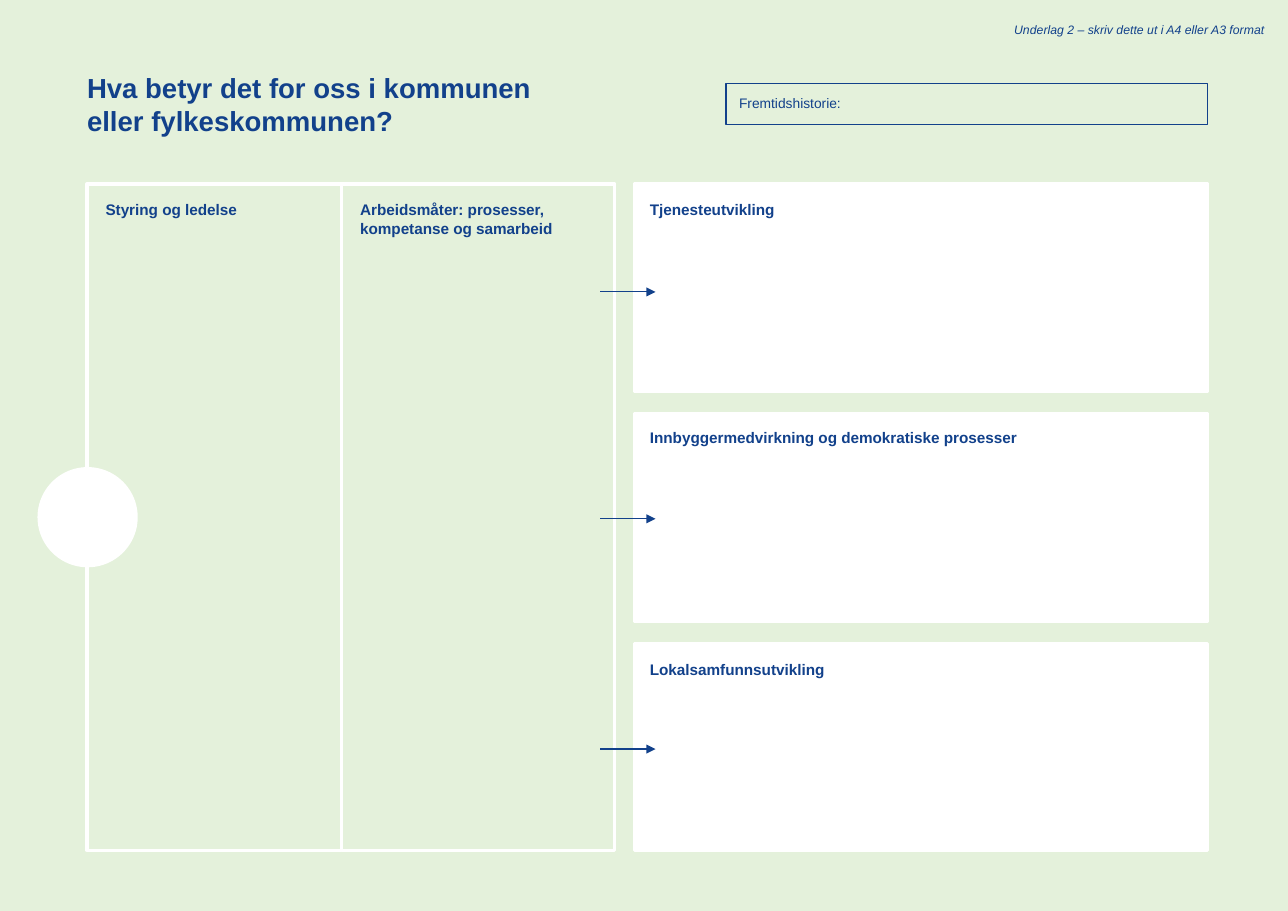
from lxml import etree
from pptx import Presentation
from pptx.dml.color import RGBColor
from pptx.enum.shapes import MSO_CONNECTOR, MSO_SHAPE
from pptx.enum.text import MSO_ANCHOR, MSO_AUTO_SIZE, PP_ALIGN
from pptx.oxml.ns import qn
from pptx.util import Inches, Pt

RECT, OVAL = MSO_SHAPE.RECTANGLE, MSO_SHAPE.OVAL
STRAIGHT = MSO_CONNECTOR.STRAIGHT
TOP, NO_FIT = MSO_ANCHOR.TOP, MSO_AUTO_SIZE.NONE
LEFT, RIGHT = PP_ALIGN.LEFT, PP_ALIGN.RIGHT
COLORS = {name: RGBColor.from_string(value) for name, value in
          {"background": "E4F1DB", "white": "FFFFFF", "blue": "12418B"}.items()}

prs = Presentation()
prs.slide_width, prs.slide_height = Inches(11.69), Inches(8.27)
s = prs.slides.add_slide(prs.slide_layouts[5])
s.background.fill.solid()
s.background.fill.fore_color.rgb = COLORS["background"]


def add_text(text, x, y, w, h, size=10, bold=False, italic=False,
             align=LEFT, inset=0.1, sp=None):
    box = [Inches(v) for v in (x, y, w, h)]
    if sp is None:
        sp = s.shapes.add_textbox(*box)
    sp.left, sp.top, sp.width, sp.height = box
    tf = sp.text_frame
    tf.word_wrap, tf.auto_size, tf.vertical_anchor = True, NO_FIT, TOP
    tf.margin_left = tf.margin_right = Inches(inset)
    tf.margin_top = tf.margin_bottom = Inches(inset)
    p = tf.paragraphs[0]
    p.alignment = align
    r = p.add_run()
    r.text = text
    r.font.name, r.font.size = "Arial", Pt(size)
    r.font.bold, r.font.italic = bold, italic
    r.font.color.rgb = COLORS["blue"]


def add_box(kind, x, y, w, h, fill=None, line=None, width=2.25):
    sp = s.shapes.add_shape(kind, Inches(x), Inches(y), Inches(w), Inches(h))
    sp.shadow.inherit = False
    if fill:
        sp.fill.solid()
        sp.fill.fore_color.rgb = COLORS[fill]
    else:
        sp.fill.background()
    if line:
        sp.line.color.rgb = COLORS[line]
        sp.line.width = Pt(width)
    else:
        sp.line.fill.background()


add_text("Hva betyr det for oss i kommunen eller fylkeskommunen?",
         0.68, 0.53, 4.37, 0.83, size=18, bold=True, inset=0.11, sp=s.shapes.title)
add_text("Underlag 2 – skriv dette ut i A4 eller A3 format",
         8.74, 0.09, 2.85, 0.36, size=8, italic=True, align=RIGHT, inset=0.11)
add_box(RECT, 6.59, 0.76, 4.37, 0.37, line="blue", width=0.75)
add_text("Fremtidshistorie:", 6.61, 0.76, 1.27, 0.35, size=9)

columns = [
    ("Styring og ledelse", 0.79, 2.31, 0.86, 1.77, 0.37),
    ("Arbeidsmåter: prosesser, kompetanse og samarbeid", 3.1, 2.48, 3.17, 2.11, 0.54),
]
for heading, x, w, text_x, text_w, text_h in columns:
    add_box(RECT, x, 1.67, w, 6.05, line="white")
    add_text(heading, text_x, 1.72, text_w, text_h, bold=True)
add_box(OVAL, 0.34, 4.24, 0.91, 0.91, fill="white")

panels = [
    ("Tjenesteutvikling", 1.67, 1.72, 2.65),
    ("Innbyggermedvirkning og demokratiske prosesser", 3.76, 3.79, 4.71),
    ("Lokalsamfunnsutvikling", 5.84, 5.89, 6.8),
]
for heading, y, text_y, arrow_y in panels:
    add_box(RECT, 5.76, y, 5.2, 1.88, fill="white", line="white")
    add_text(heading, 5.8, text_y, 3.81, 0.37, bold=True)
    arrow = s.shapes.add_connector(STRAIGHT, Inches(5.45), Inches(arrow_y),
                                   Inches(5.95), Inches(arrow_y))
    arrow.line.color.rgb = COLORS["blue"]
    arrow.line.width = Pt(0.75)
    etree.SubElement(arrow.line._get_or_add_ln(), qn("a:tailEnd"), type="triangle")
    etree.SubElement(arrow._element.spPr, qn("a:effectLst"))

prs.save("out.pptx")
